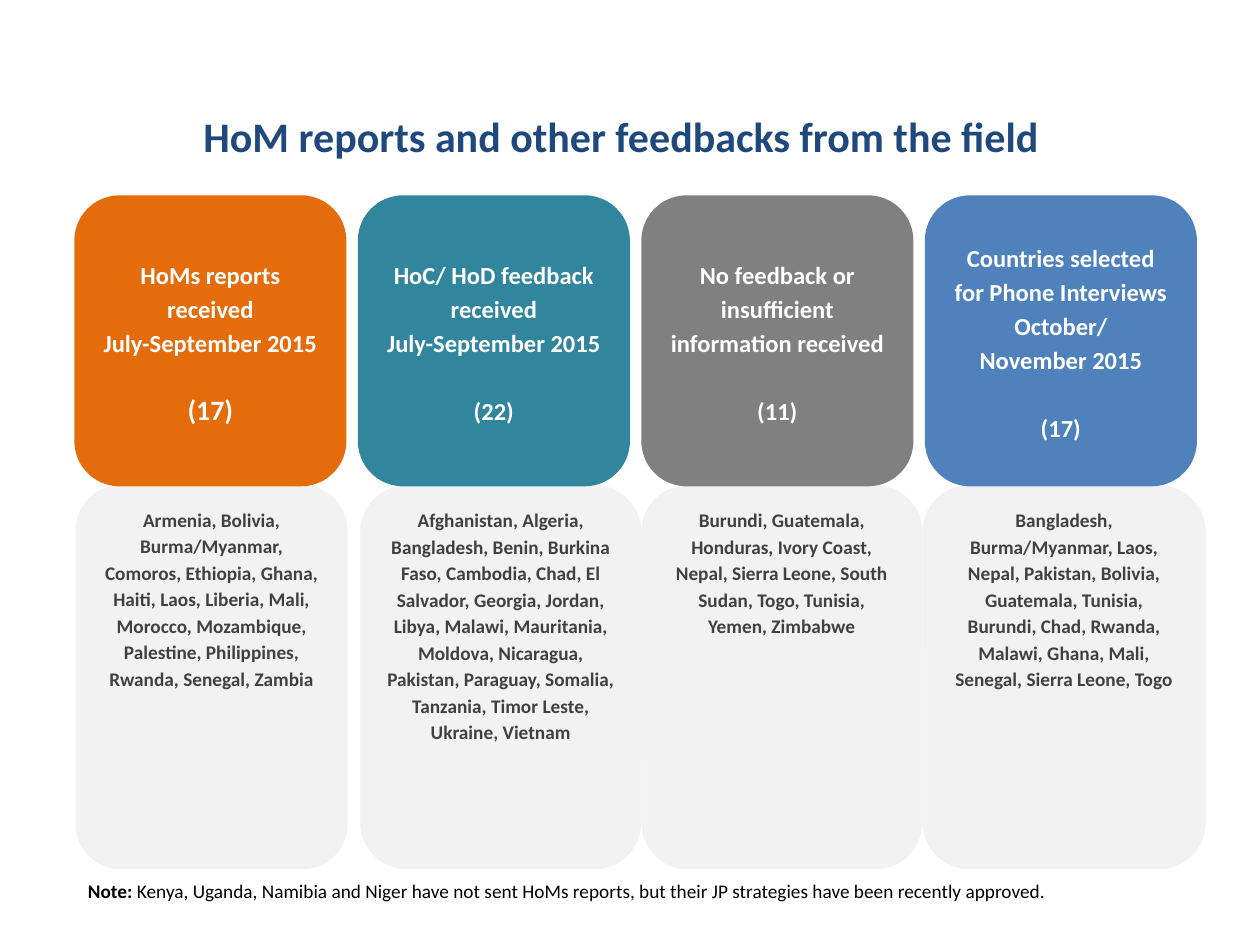
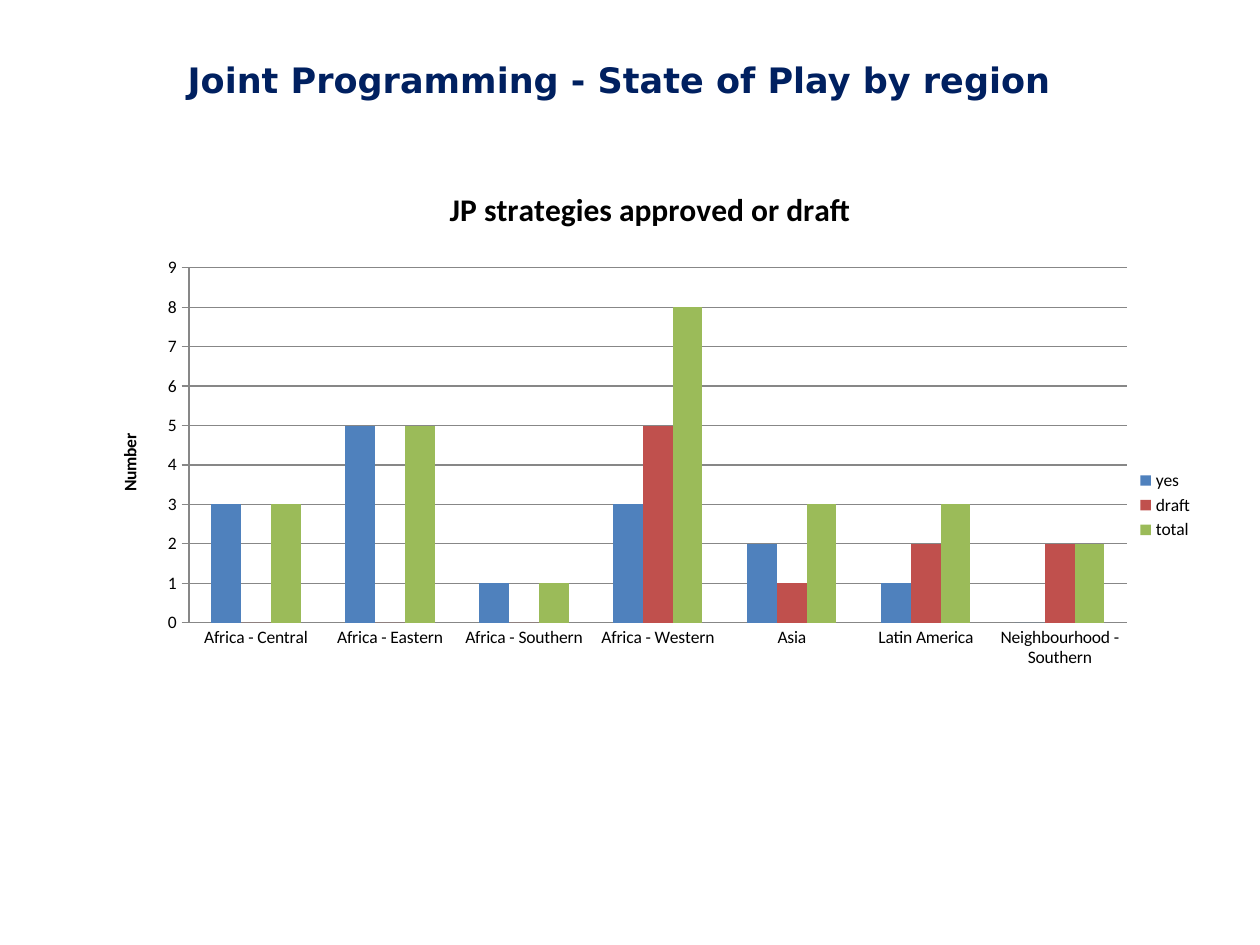
from lxml import etree
from pptx import Presentation
from pptx.chart.data import CategoryChartData
from pptx.dml.color import RGBColor
from pptx.enum.chart import XL_CHART_TYPE, XL_LEGEND_POSITION, XL_TICK_MARK
from pptx.enum.shapes import MSO_SHAPE
from pptx.enum.text import MSO_ANCHOR, PP_ALIGN
from pptx.oxml import parse_xml
from pptx.util import Inches, Pt

ROUNDED = MSO_SHAPE.ROUNDED_RECTANGLE
RECTANGLE = MSO_SHAPE.RECTANGLE
CENTER, LEFT = PP_ALIGN.CENTER, PP_ALIGN.LEFT
MIDDLE, TOP = MSO_ANCHOR.MIDDLE, MSO_ANCHOR.TOP
COLUMNS = XL_CHART_TYPE.COLUMN_CLUSTERED
LEGEND_RIGHT = XL_LEGEND_POSITION.RIGHT
NO_TICK, OUTSIDE_TICK = XL_TICK_MARK.NONE, XL_TICK_MARK.OUTSIDE
CHART_NAMESPACE = "http://schemas.openxmlformats.org/drawingml/2006/chart"

WHITE, BLACK = "FFFFFF", "000000"
PANEL, PANEL_TEXT = "F2F2F2", "404040"
AXIS_GREY = "878787"
FONT = "Calibri"
LINE_SPACING = 1.15

COLUMN_LEFT, COLUMN_STEP = 0.59, 2.25
HEADER_TOP, HEADER_WIDTH, HEADER_HEIGHT = 1.55, 2.16, 2.31
PANEL_TOP, PANEL_HEIGHT = 3.85, 3.05


def paint(fill, color):
    fill.solid()
    fill.fore_color.rgb = RGBColor.from_string(color)


def write_text(paragraph, text, size=14, color=BLACK, bold=True, font=FONT,
               align=CENTER, spacing=None, before=None, after=None):
    run = paragraph.add_run()
    run.text = text
    run.font.name = font
    run.font.size = Pt(size)
    run.font.bold = bold
    paint(run.font.fill, color)
    paragraph.alignment = align
    paragraph.line_spacing = spacing
    if before is not None:
        paragraph.space_before = Pt(before)
    if after is not None:
        paragraph.space_after = Pt(after)


presentation = Presentation()
presentation.slide_width = Inches(10)
presentation.slide_height = Inches(7.5)

titles = [
    ("HoM reports and other feedbacks from the field", (0.43, 0.76, 9, 0.63), 24, "1F497D", FONT),
    ("Joint Programming - State of Play by region", (0.15, 0.41, 9.53, 0.44), 20, "002060", "DejaVu Sans"),
]
slides = []
for text, place, size, color, font in titles:
    slide = presentation.slides.add_slide(presentation.slide_layouts[5])
    title = slide.shapes.title
    title.left, title.top, title.width, title.height = map(Inches, place)
    title.text_frame.vertical_anchor = MIDDLE
    write_text(title.text_frame.paragraphs[0], text, size=size, color=color, font=font)
    slides.append(slide)
feedback_slide, region_slide = slides

feedback_columns = [
    ("E46C0A", ["HoMs reports received", "July-September 2015"], "(17)", 16, 17, 0.6, 2.16,
     "Armenia, Bolivia, Burma/Myanmar, Comoros, Ethiopia, Ghana, Haiti, Laos, Liberia, Mali, "
     "Morocco, Mozambique, Palestine, Philippines, Rwanda, Senegal, Zambia"),
    ("31859C", ["HoC/ HoD feedback received", "July-September 2015"], "(22)", 14, 20, 2.86, 2.23,
     "Afghanistan, Algeria, Bangladesh, Benin, Burkina Faso, Cambodia, Chad, El Salvador, Georgia, "
     "Jordan, Libya, Malawi, Mauritania, Moldova, Nicaragua, Pakistan, Paraguay, Somalia, Tanzania, "
     "Timor Leste, Ukraine, Vietnam"),
    ("808080", ["No feedback or insufficient information received"], "(11)", 14, 20, 5.09, 2.23,
     "Burundi, Guatemala, Honduras, Ivory Coast, Nepal, Sierra Leone, South Sudan, Togo, Tunisia, "
     "Yemen, Zimbabwe"),
    ("4F81BD", ["Countries selected for Phone Interviews", "October/", "November 2015"], "(17)", 14, 20,
     7.32, 2.25,
     "Bangladesh, Burma/Myanmar, Laos, Nepal, Pakistan, Bolivia, Guatemala, Tunisia, Burundi, Chad, "
     "Rwanda, Malawi, Ghana, Mali, Senegal, Sierra Leone, Togo"),
]
boxes = []
for index, column in enumerate(feedback_columns):
    color, headings, count, count_size, count_gap, panel_left, panel_width, countries = column
    header_left = COLUMN_LEFT + index * COLUMN_STEP
    boxes.append((ROUNDED, (panel_left, PANEL_TOP, panel_width, PANEL_HEIGHT), PANEL, TOP,
                  [[(countries, dict(size=11, color=PANEL_TEXT))]]))
    header_lines = [[(heading, dict(color=WHITE))] for heading in headings]
    header_lines.append([(count, dict(size=count_size, color=WHITE, before=count_gap))])
    boxes.append((ROUNDED, (header_left, HEADER_TOP, HEADER_WIDTH, HEADER_HEIGHT), color, MIDDLE,
                  header_lines))
note_format = dict(size=11, align=LEFT, after=10)
boxes.append((RECTANGLE, (0.6, 6.9, 9.4, 0.5), WHITE, TOP, [[
    ("Note: ", note_format),
    ("Kenya, Uganda, Namibia and Niger have not sent HoMs reports, but their JP strategies "
     "have been recently approved.", dict(note_format, bold=False)),
]]))

for outline, place, color, anchor, lines in boxes:
    shape = feedback_slide.shapes.add_shape(outline, *map(Inches, place))
    shape.shadow.inherit = False
    paint(shape.fill, color)
    shape.line.fill.background()
    frame = shape.text_frame
    frame.word_wrap = True
    frame.vertical_anchor = anchor
    for number, runs in enumerate(lines):
        paragraph = frame.add_paragraph() if number else frame.paragraphs[0]
        for text, text_format in runs:
            write_text(paragraph, text, spacing=LINE_SPACING, **text_format)

strategies = [
    ("yes", "4F81BD", (3, 5, 1, 3, 2, 1, 0)),
    ("draft", "C0504D", (0, 0, 0, 5, 1, 2, 2)),
    ("total", "9BBB59", (3, 5, 1, 8, 3, 3, 2)),
]
chart_data = CategoryChartData(number_format="0")
chart_data.categories = ["Africa - Central", "Africa - Eastern", "Africa - Southern", "Africa - Western",
                         "Asia", "Latin America", "Neighbourhood - Southern"]
for name, color, values in strategies:
    chart_data.add_series(name, values)
chart_place = map(Inches, (0.75, 1.28, 8.82, 5.46))
chart = region_slide.shapes.add_chart(COLUMNS, *chart_place, chart_data).chart
chart.font.name = FONT
chart.font.size = Pt(10)
paint(chart.font.fill, BLACK)

chart.has_title = True
write_text(chart.chart_title.text_frame.paragraphs[0], "JP strategies approved or draft", size=18)
chart.chart_title.include_in_layout = False
chart.has_legend = True
chart.legend.position = LEGEND_RIGHT
chart.legend.include_in_layout = False

plot = chart.plots[0]
plot.gap_width = 150
plot.overlap = 0
plot.vary_by_categories = False
for series, (name, color, values) in zip(plot.series, strategies):
    paint(series.format.fill, color)
    series.invert_if_negative = False

category_axis, value_axis = chart.category_axis, chart.value_axis
category_axis.major_tick_mark = NO_TICK
value_axis.major_tick_mark = OUTSIDE_TICK
value_axis.minimum_scale, value_axis.maximum_scale, value_axis.major_unit = 0, 9, 1
value_axis.has_major_gridlines = True
write_text(value_axis.axis_title.text_frame.paragraphs[0], "Number", size=10)
for line in (category_axis.format.line, value_axis.format.line, value_axis.major_gridlines.format.line):
    paint(line.fill, AXIS_GREY)
    line.width = Pt(0.75)

plot_area = chart.element.find(f".//{{{CHART_NAMESPACE}}}plotArea")
for old_layout in plot_area.findall(f"{{{CHART_NAMESPACE}}}layout"):
    plot_area.remove(old_layout)
layout = parse_xml(f'<c:layout xmlns:c="{CHART_NAMESPACE}"><c:manualLayout/></c:layout>')
for tag, value in (("layoutTarget", "inner"), ("xMode", "edge"), ("yMode", "edge"),
                   ("x", "0.085"), ("y", "0.155"), ("w", "0.844"), ("h", "0.516")):
    etree.SubElement(layout[0], f"{{{CHART_NAMESPACE}}}{tag}").set("val", value)
plot_area.insert(0, layout)

presentation.save("out.pptx")
